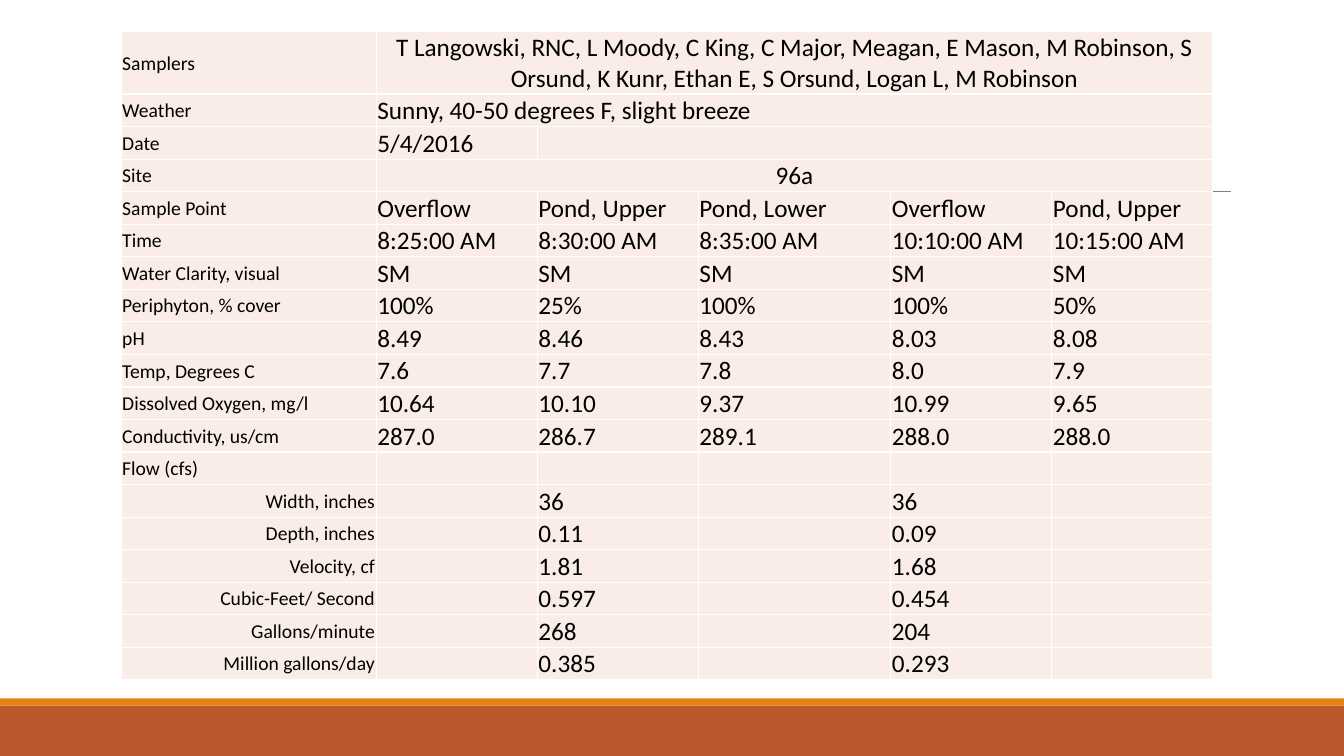
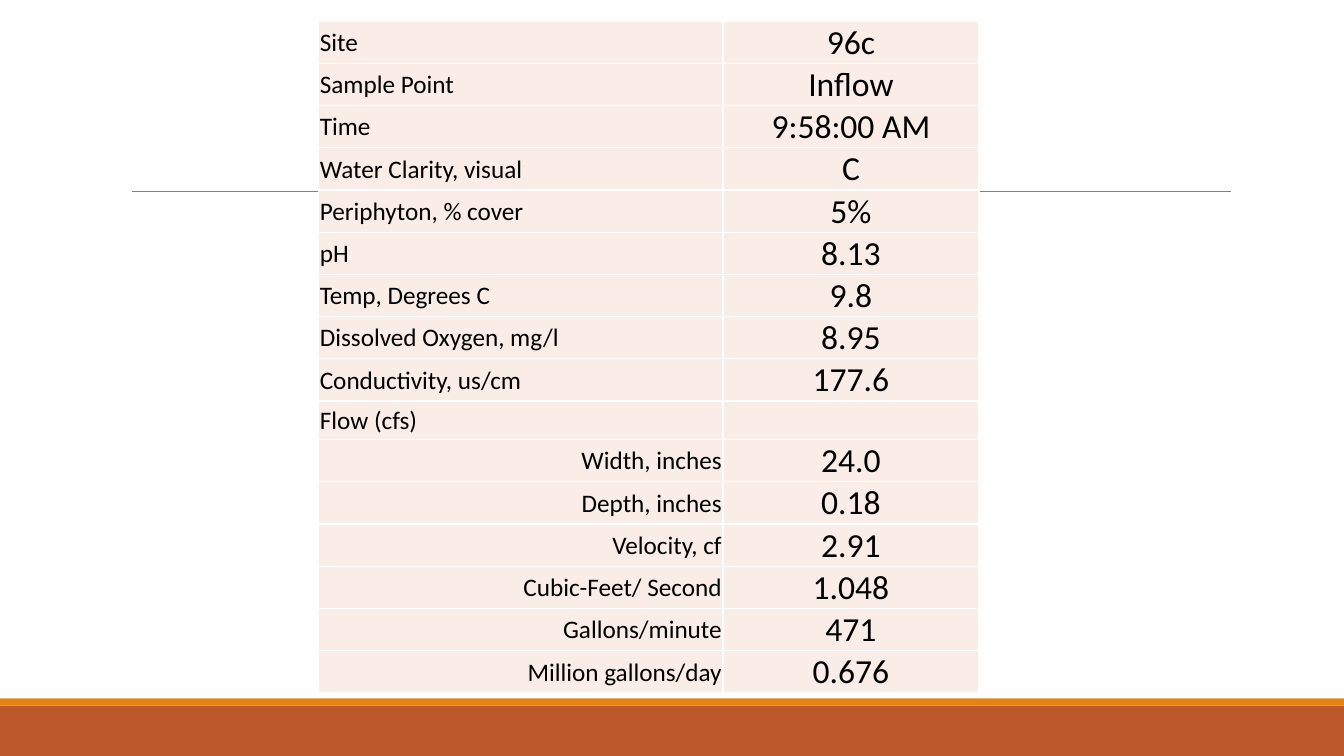
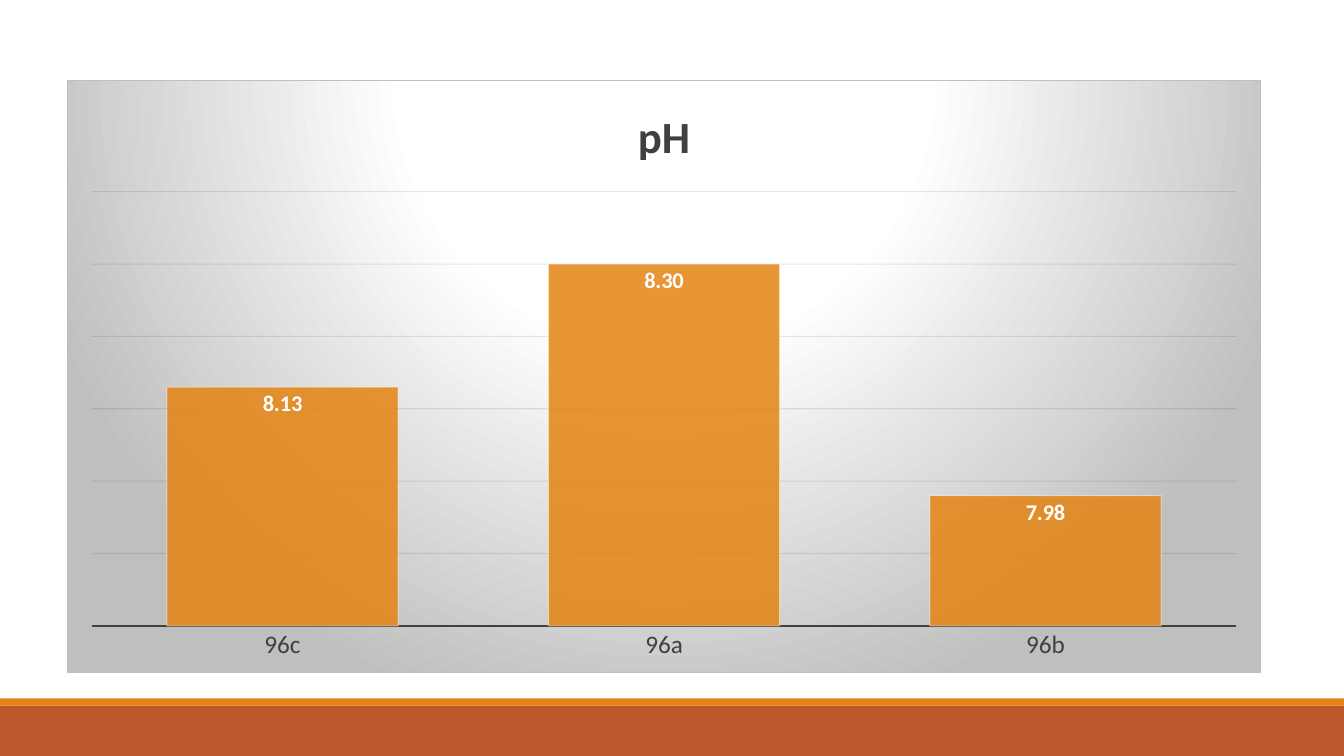
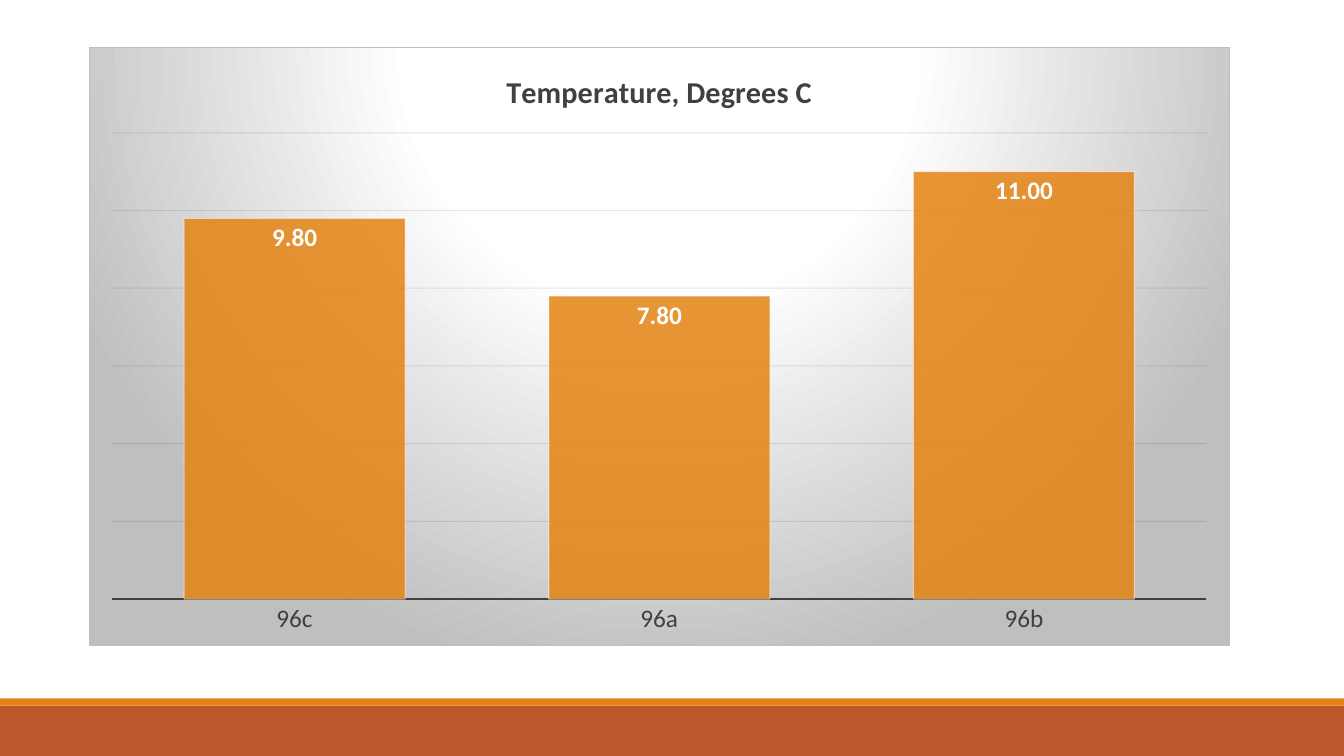
from lxml import etree
from pptx import Presentation
from pptx.chart.data import CategoryChartData
from pptx.dml.color import RGBColor
from pptx.enum.chart import XL_CHART_TYPE, XL_LABEL_POSITION, XL_TICK_MARK
from pptx.enum.shapes import MSO_CONNECTOR, MSO_SHAPE
from pptx.enum.text import MSO_ANCHOR, PP_ALIGN
from pptx.oxml import parse_xml
from pptx.oxml.ns import nsdecls, qn
from pptx.util import Cm, Pt

LEFT, CENTER, RIGHT = PP_ALIGN.LEFT, PP_ALIGN.CENTER, PP_ALIGN.RIGHT
MIDDLE = MSO_ANCHOR.MIDDLE
COLUMNS = XL_CHART_TYPE.COLUMN_CLUSTERED
INSIDE_END = XL_LABEL_POSITION.INSIDE_END
NO_TICK = XL_TICK_MARK.NONE
RECTANGLE = MSO_SHAPE.RECTANGLE
STRAIGHT = MSO_CONNECTOR.STRAIGHT

FONT = "Calibri"
COLORS = {
    "rust": "BD582C",
    "orange": "E48312",
    "rule": "808080",
    "cell": "FAEDE7",
    "white": "FFFFFF",
    "black": "000000",
    "gray": "404040",
    "edge": "BFBFBF",
    "grid": "0D0D0D",
}
SLIDE_WIDTH, SLIDE_HEIGHT = 33.87, 19.05
BANDS = [("rust", 17.78, 1.27), ("orange", 17.6, 0.18)]

MEASURES = [
    "Site", "Sample Point", "Time", "Water Clarity, visual", "Periphyton, % cover",
    "pH", "Temp, Degrees C", "Dissolved Oxygen, mg/l", "Conductivity, us/cm", "Flow (cfs)",
]
FLOW_MEASURES = [
    "Width, inches", "Depth, inches", "Velocity, cf", "Cubic-Feet/ Second",
    "Gallons/minute", "Million gallons/day",
]
LABELS = MEASURES + FLOW_MEASURES

VISIT = [
    ("Samplers", ["T Langowski, RNC, L Moody, C King, C Major, Meagan, E Mason, M Robinson, "
                  "S Orsund, K Kunr, Ethan E, S Orsund, Logan L, M Robinson"]),
    ("Weather", ["Sunny, 40-50 degrees F, slight breeze"]),
    ("Date", ["5/4/2016", ""]),
]
POND_READINGS = [
    ["96a"],
    ["Overflow", "Pond, Upper", "Pond, Lower", "Overflow", "Pond, Upper"],
    ["8:25:00 AM", "8:30:00 AM", "8:35:00 AM", "10:10:00 AM", "10:15:00 AM"],
    ["SM", "SM", "SM", "SM", "SM"],
    ["100%", "25%", "100%", "100%", "50%"],
    ["8.49", "8.46", "8.43", "8.03", "8.08"],
    ["7.6", "7.7", "7.8", "8.0", "7.9"],
    ["10.64", "10.10", "9.37", "10.99", "9.65"],
    ["287.0", "286.7", "289.1", "288.0", "288.0"],
    ["", "", "", "", ""],
    ["", "36", "", "36", ""],
    ["", "0.11", "", "0.09", ""],
    ["", "1.81", "", "1.68", ""],
    ["", "0.597", "", "0.454", ""],
    ["", "268", "", "204", ""],
    ["", "0.385", "", "0.293", ""],
]
INFLOW_READINGS = [
    "96c", "Inflow", "9:58:00 AM", "C", "5%", "8.13", "9.8", "8.95", "177.6", "",
    "24.0", "0.18", "2.91", "1.048", "471", "0.676",
]

TABLES = [
    {
        "rows": VISIT + list(zip(LABELS, POND_READINGS)),
        "place": (3.05, 0.79),
        "columns": [6.43, 4.06, 4.06, 4.85, 4.06, 4.06],
        "heights": [1.57] + [0.82] * 18,
        "sizes": (14, 18),
        "centered": ["Samplers", "Site"],
    },
    {
        "rows": [(label, [value]) for label, value in zip(LABELS, INFLOW_READINGS)],
        "place": (8.03, 0.53),
        "columns": [10.19, 6.45],
        "heights": [0.97] * 16,
        "sizes": (18, 24),
        "centered": LABELS,
    },
]

SITES = ["96c", "96a", "96b"]
CHARTS = [
    {
        "title": "pH", "values": [8.13, 8.3, 7.98], "scale": (7.8, 8.4, 0.1),
        "place": (1.7, 2.01, 30.07, 14.94), "title_size": 32, "label_size": 16,
    },
    {
        "title": "Temperature, Degrees C", "values": [9.8, 7.8, 11], "scale": (0, 12, 2),
        "place": (2.24, 1.19, 28.75, 15.09), "title_size": 21.6, "label_size": 18,
    },
]
NUMBER_FORMAT = "#,##0.00"

BORDERS = "".join(
    f'<a:{side} {nsdecls("a")} w="12700"><a:solidFill><a:srgbClr val="{COLORS["white"]}"/>'
    f"</a:solidFill></a:{side}>|"
    for side in ("lnL", "lnR", "lnT", "lnB")
).rstrip("|").split("|")
CHART_BACKGROUND = f"""<c:spPr {nsdecls("c", "a")}>
  <a:gradFill><a:gsLst>
    <a:gs pos="0"><a:srgbClr val="{COLORS["white"]}"/></a:gs>
    <a:gs pos="39000"><a:srgbClr val="{COLORS["white"]}"/></a:gs>
    <a:gs pos="100000"><a:srgbClr val="{COLORS["edge"]}"/></a:gs>
  </a:gsLst><a:path path="circle">
    <a:fillToRect l="50000" t="-80000" r="50000" b="180000"/>
  </a:path></a:gradFill>
  <a:ln w="9525"><a:solidFill><a:srgbClr val="{COLORS["edge"]}"/></a:solidFill></a:ln>
</c:spPr>"""


def color(name):
    return RGBColor.from_string(COLORS[name])


def style_font(font, size, name, bold=False):
    font.name = FONT
    font.size = Pt(size)
    font.bold = bold
    font.color.rgb = color(name)


def style_line(line, name, width):
    line.color.rgb = color(name)
    line.width = Pt(width)


def set_opacity(parent, *percents):
    for tint, percent in zip(list(parent.iter(qn("a:srgbClr"))), percents):
        etree.SubElement(tint, qn("a:alpha"), val=str(percent * 1000))


def add_page(deck):
    page = deck.slides.add_slide(deck.slide_layouts[6])
    for name, top, height in BANDS:
        band = page.shapes.add_shape(RECTANGLE, 0, Cm(top), Cm(SLIDE_WIDTH), Cm(height))
        band.shadow.inherit = False
        band.fill.solid()
        band.fill.fore_color.rgb = color(name)
        band.line.fill.background()
    return page


def add_rule(page):
    rule = page.shapes.add_connector(STRAIGHT, Cm(3.33), Cm(4.83), Cm(31.01), Cm(4.83))
    style_line(rule.line, "rule", 0.5)
    etree.SubElement(rule.element.spPr, qn("a:effectLst"))


def write_cell(cell, text, size, alignment):
    if text:
        para = cell.text_frame.paragraphs[0]
        para.alignment = alignment
        span = para.add_run()
        span.text = text
        style_font(span.font, size, "black")


def add_readings(page, spec_sheet):
    rows, columns = spec_sheet["rows"], spec_sheet["columns"]
    heights = spec_sheet["heights"]
    left, top = spec_sheet["place"]
    frame = page.shapes.add_table(len(rows), len(columns), Cm(left), Cm(top),
                                  Cm(sum(columns)), Cm(sum(heights)))
    table = frame.table
    table.first_row = table.horz_banding = False
    for column, width in zip(table.columns, columns):
        column.width = Cm(width)
    for row, height in zip(table.rows, heights):
        row.height = Cm(height)
    for cell in table.iter_cells():
        cell.fill.solid()
        cell.fill.fore_color.rgb = color("cell")
        cell.vertical_anchor = MIDDLE
        cell.margin_left = cell.margin_right = cell.margin_top = Cm(0.03)
        cell.margin_bottom = 0
    for properties in frame.element.iter(qn("a:tcPr")):
        for index, border in enumerate(BORDERS):
            properties.insert(index, parse_xml(border))

    label_size, value_size = spec_sheet["sizes"]
    last = len(columns) - 1
    for index, (label, values) in enumerate(rows):
        write_cell(table.cell(index, 0), label, label_size,
                   RIGHT if label in FLOW_MEASURES else LEFT)
        if len(values) < last:
            table.cell(index, len(values)).merge(table.cell(index, last))
        alignment = CENTER if label in spec_sheet["centered"] else LEFT
        for position, value in enumerate(values, 1):
            write_cell(table.cell(index, position), value, value_size, alignment)


def add_site_chart(page, content):
    data = CategoryChartData(number_format=NUMBER_FORMAT)
    data.categories = SITES
    data.add_series(content["title"], content["values"])
    place = [Cm(length) for length in content["place"]]
    chart = page.shapes.add_chart(COLUMNS, *place, data).chart
    style_font(chart.font, 18, "black")
    chart.has_legend = False
    chart.has_title = True
    span = chart.chart_title.text_frame.paragraphs[0].add_run()
    span.text = content["title"]
    style_font(span.font, content["title_size"], "gray", True)
    chart.chart_title.include_in_layout = False

    sites = chart.category_axis
    sites.major_tick_mark = sites.minor_tick_mark = NO_TICK
    style_font(sites.tick_labels.font, 18, "gray")
    style_line(sites.format.line, "gray", 1.5)
    scale = chart.value_axis
    scale.minimum_scale, scale.maximum_scale, scale.major_unit = content["scale"]
    scale.visible = False
    style_line(scale.major_gridlines.format.line, "grid", 0.75)

    plot = chart.plots[0]
    plot.gap_width = 65
    plot.vary_by_categories = False
    bars = plot.series[0]
    bars.format.fill.solid()
    bars.format.fill.fore_color.rgb = color("orange")
    style_line(bars.format.line, "white", 0.75)
    labels = bars.data_labels
    labels.show_value = True
    labels.position = INSIDE_END
    labels.number_format = NUMBER_FORMAT
    labels.number_format_is_linked = False
    style_font(labels.font, content["label_size"], "white", True)

    root = chart.element
    set_opacity(root.find(f'.//{qn("c:ser")}/{qn("c:spPr")}'), 85, 50)
    set_opacity(root.find(f'.//{qn("c:majorGridlines")}'), 10)
    root.find(qn("c:chart")).addnext(parse_xml(CHART_BACKGROUND))


def main():
    deck = Presentation()
    deck.slide_width, deck.slide_height = Cm(SLIDE_WIDTH), Cm(SLIDE_HEIGHT)
    for content in TABLES:
        page = add_page(deck)
        add_rule(page)
        add_readings(page, content)
    for content in CHARTS:
        add_site_chart(add_page(deck), content)
    deck.save("out.pptx")


if __name__ == "__main__":
    main()
